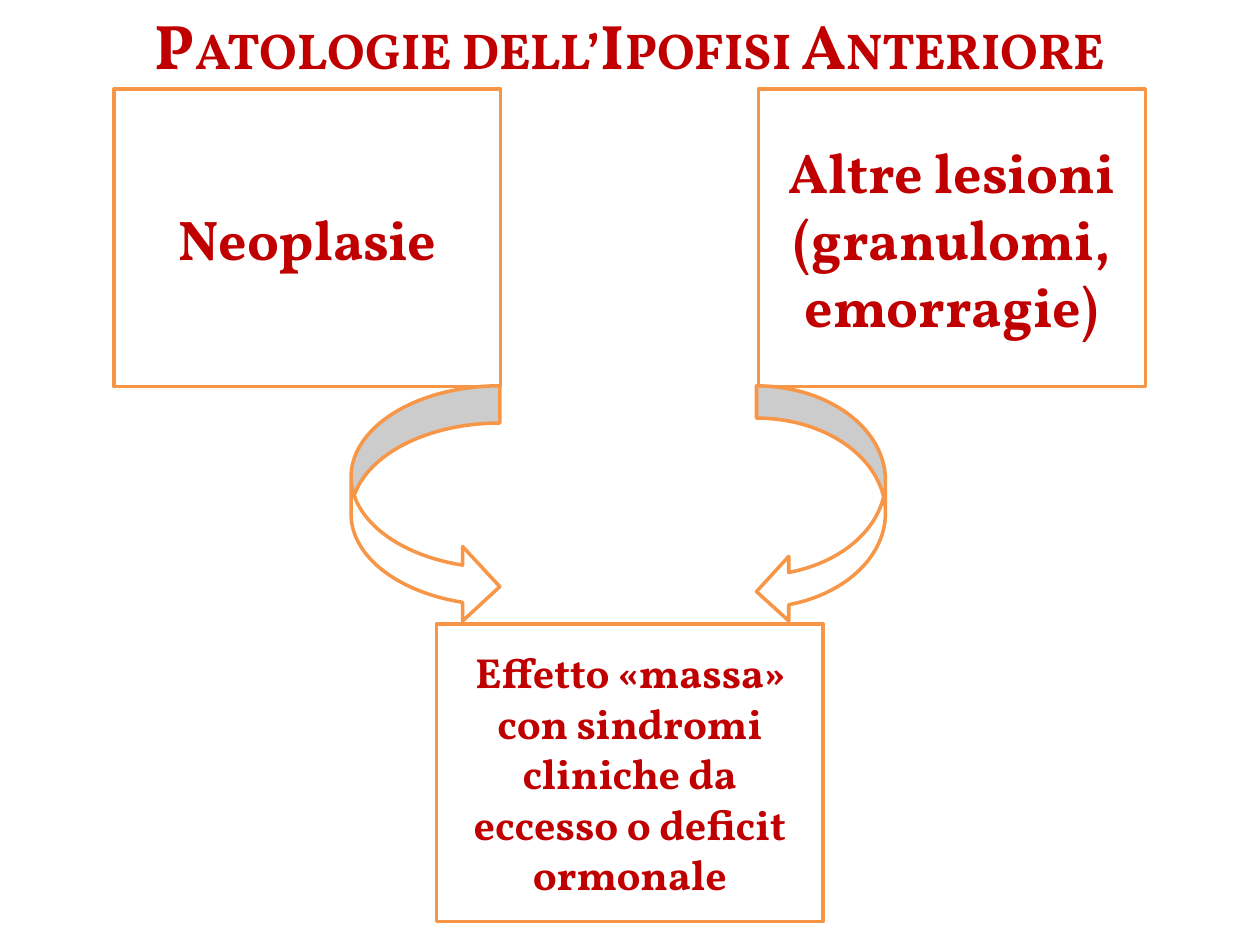
"""Build a slide on the pathologies of the anterior pituitary."""
from pptx import Presentation
from pptx.dml.color import RGBColor
from pptx.enum import shapes, text
from pptx.util import Pt

RED = RGBColor(0xC0, 0x00, 0x00)
ORANGE = RGBColor(0xF7, 0x96, 0x46)
WHITE = RGBColor(0xFF, 0xFF, 0xFF)
BOX_W, BOX_H = 221, 170


def write(tf, lines, size, small_caps=False):
    tf.word_wrap = True
    for i, line in enumerate(lines):
        p = tf.paragraphs[0] if i == 0 else tf.add_paragraph()
        p.alignment = text.PP_ALIGN.CENTER
        r = p.add_run()
        r.text = line
        r.font.name = "Vollkorn"
        r.font.size = Pt(size)
        r.font.bold = True
        r.font.color.rgb = RED
        if small_caps:
            r.font._element.set("cap", "small")


def add_outlined(kind, left, top, width, height):
    sp = s.shapes.add_shape(kind, Pt(left), Pt(top), Pt(width), Pt(height))
    sp.shadow.inherit = False
    sp.fill.solid()
    sp.fill.fore_color.rgb = WHITE
    sp.line.color.rgb = ORANGE
    sp.line.width = Pt(2)
    return sp


prs = Presentation()
prs.slide_width, prs.slide_height = Pt(720), Pt(540)
s = prs.slides.add_slide(prs.slide_layouts[6])

title = s.shapes.add_textbox(Pt(0), Pt(0), Pt(720), Pt(51))
write(title.text_frame, ["Patologie dell’Ipofisi Anteriore"], 36, small_caps=True)

boxes = [
    (65.2, 51, 32, ["Neoplasie"]),
    (433.5, 51, 32, ["Altre lesioni", "(granulomi, emorragie)"]),
    (249.4, 356.6, 24, ["Effetto «massa» con sindromi cliniche da eccesso o deficit ormonale"]),
]
for left, top, size, lines in boxes:
    sp = add_outlined(shapes.MSO_SHAPE.RECTANGLE, left, top, BOX_W, BOX_H)
    sp.text_frame.vertical_anchor = text.MSO_ANCHOR.MIDDLE
    write(sp.text_frame, lines, size)

arrows = [
    (shapes.MSO_SHAPE.CURVED_RIGHT_ARROW, 200.6, 85),
    (shapes.MSO_SHAPE.CURVED_LEFT_ARROW, 432.3, 73.7),
]
for kind, left, width in arrows:
    add_outlined(kind, left, 220.5, width, 136)

prs.save("out.pptx")
